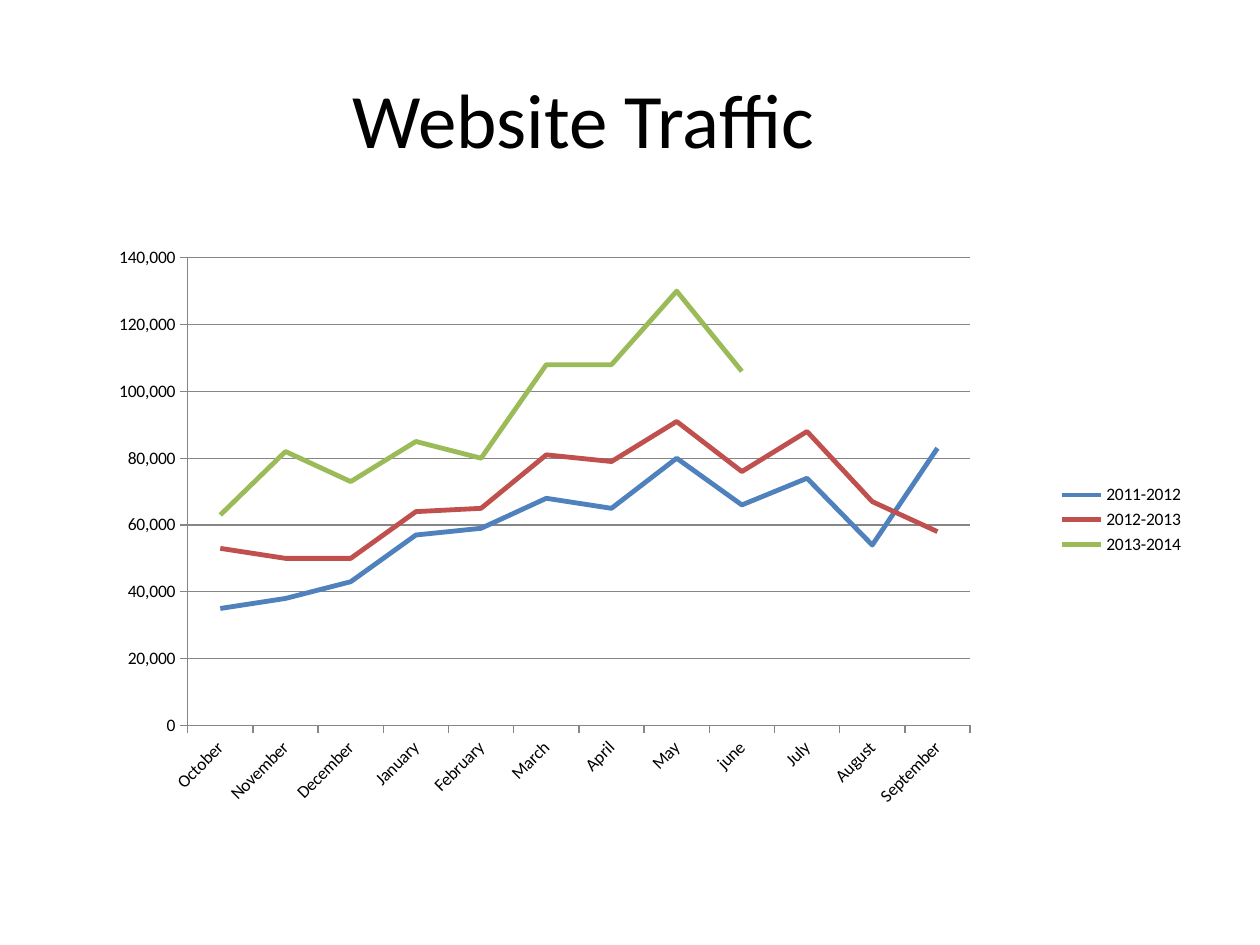
from dataclasses import dataclass

from lxml.etree import SubElement
from pptx import Presentation
from pptx.chart.data import CategoryChartData
from pptx.dml.color import RGBColor
from pptx.enum.chart import XL_CHART_TYPE, XL_LEGEND_POSITION, XL_MARKER_STYLE, XL_TICK_MARK
from pptx.enum.text import MSO_ANCHOR, MSO_AUTO_SIZE, PP_ALIGN
from pptx.oxml.ns import qn
from pptx.util import Inches, Pt

MONTHS = ["October", "November", "December", "January", "February", "March",
          "April", "May", "june", "July", "August", "September"]
VISITS = {
    "2011-2012": [35000, 38000, 43000, 57000, 59000, 68000,
                  65000, 80000, 66000, 74000, 54000, 83000],
    "2012-2013": [53000, 50000, 50000, 64000, 65000, 81000,
                  79000, 91000, 76000, 88000, 67000, 58000],
    "2013-2014": [63000, 82000, 73000, 85000, 80000, 108000,
                  108000, 130000, 106000, None, None, None],
}


@dataclass(frozen=True)
class Theme:
    font: str = "Calibri"
    text: str = "000000"
    axis: str = "868686"
    series: tuple = ("4F81BD", "C0504D", "9BBB59")
    title_size: float = 44
    chart_size: float = 10
    axis_width: float = 0.75
    series_width: float = 2.75


def set_all(target, values):
    for name, value in values.items():
        setattr(target, name, value)


class Deck:
    def __init__(self, theme):
        self.theme = theme
        self.prs = Presentation()
        set_all(self.prs, {"slide_width": Inches(10), "slide_height": Inches(7.5)})
        self.s = self.prs.slides.add_slide(self.prs.slide_layouts[5])

    def box(self, x, y, w, h):
        """Turn shares of the slide's size into lengths."""
        width, height = self.prs.slide_width, self.prs.slide_height
        return int(x * width), int(y * height), int(w * width), int(h * height)

    def style_font(self, font, size):
        set_all(font, {"name": self.theme.font, "size": Pt(size), "bold": False})
        font.color.rgb = RGBColor.from_string(self.theme.text)

    def style_line(self, line, color, width):
        line.color.rgb = RGBColor.from_string(color)
        line.width = Pt(width)

    def title(self, text, *shares):
        sp = self.s.shapes.title
        set_all(sp, dict(zip(("left", "top", "width", "height"), self.box(*shares))))
        tf = sp.text_frame
        set_all(tf, {"word_wrap": True, "vertical_anchor": MSO_ANCHOR.MIDDLE,
                     "auto_size": MSO_AUTO_SIZE.SHAPE_TO_FIT_TEXT})
        p = tf.paragraphs[0]
        p.alignment = PP_ALIGN.CENTER
        r = p.add_run()
        r.text = text
        self.style_font(r.font, self.theme.title_size)

    def line_chart(self, categories, series, plot, *shares):
        data = CategoryChartData(number_format="#,##0")
        data.categories = categories
        for name, values in series.items():
            data.add_series(name, values)
        chart = self.s.shapes.add_chart(
            XL_CHART_TYPE.LINE, *self.box(*shares), data).chart
        set_all(chart, {"has_title": False, "has_legend": True})
        set_all(chart.legend, {"position": XL_LEGEND_POSITION.RIGHT,
                               "include_in_layout": False})
        self.style_font(chart.font, self.theme.chart_size)
        chart.plots[0].vary_by_categories = False
        for line, color in zip(chart.plots[0].series, self.theme.series):
            line.smooth = False
            line.marker.style = XL_MARKER_STYLE.NONE
            self.style_line(line.format.line, color, self.theme.series_width)
        self.axes(chart)
        self.place_plot(chart, plot)

    def axes(self, chart):
        months, visits = chart.category_axis, chart.value_axis
        for axis in (months, visits):
            set_all(axis, {"major_tick_mark": XL_TICK_MARK.OUTSIDE,
                           "minor_tick_mark": XL_TICK_MARK.NONE})
            self.style_line(axis.format.line, self.theme.axis, self.theme.axis_width)
        set_all(visits, {"minimum_scale": 0, "maximum_scale": 140000,
                         "major_unit": 20000, "has_major_gridlines": True})
        set_all(visits.tick_labels, {"number_format": "#,##0",
                                     "number_format_is_linked": False})
        self.style_line(visits.major_gridlines.format.line,
                        self.theme.axis, self.theme.axis_width)
        self.style_font(months.tick_labels.font, self.theme.chart_size)
        body = months.format.line and chart.element.find(
            ".//" + qn("c:catAx") + "/" + qn("c:txPr") + "/" + qn("a:bodyPr"))
        body.set("rot", str(-45 * 60000))

    def place_plot(self, chart, plot):
        """Fix the inner plot area, given as shares of the chart."""
        area = chart.element.find(".//" + qn("c:plotArea"))
        for old in area.findall(qn("c:layout")):
            area.remove(old)
        layout = SubElement(area, qn("c:layout"))
        area.insert(0, layout)
        manual = SubElement(layout, qn("c:manualLayout"))
        settings = {"layoutTarget": "inner", "xMode": "edge", "yMode": "edge",
                    **dict(zip("xywh", plot))}
        for tag, value in settings.items():
            SubElement(manual, qn("c:" + tag)).set("val", str(value))


def main():
    deck = Deck(Theme())
    deck.line_chart(MONTHS, VISITS, (0.11, 0.08, 0.69, 0.75), 0.05, 0.22, 0.9, 0.66)
    deck.title("Website Traffic ", 0.11, 0.07, 0.72, 0.11)
    deck.prs.save("out.pptx")


if __name__ == "__main__":
    main()
